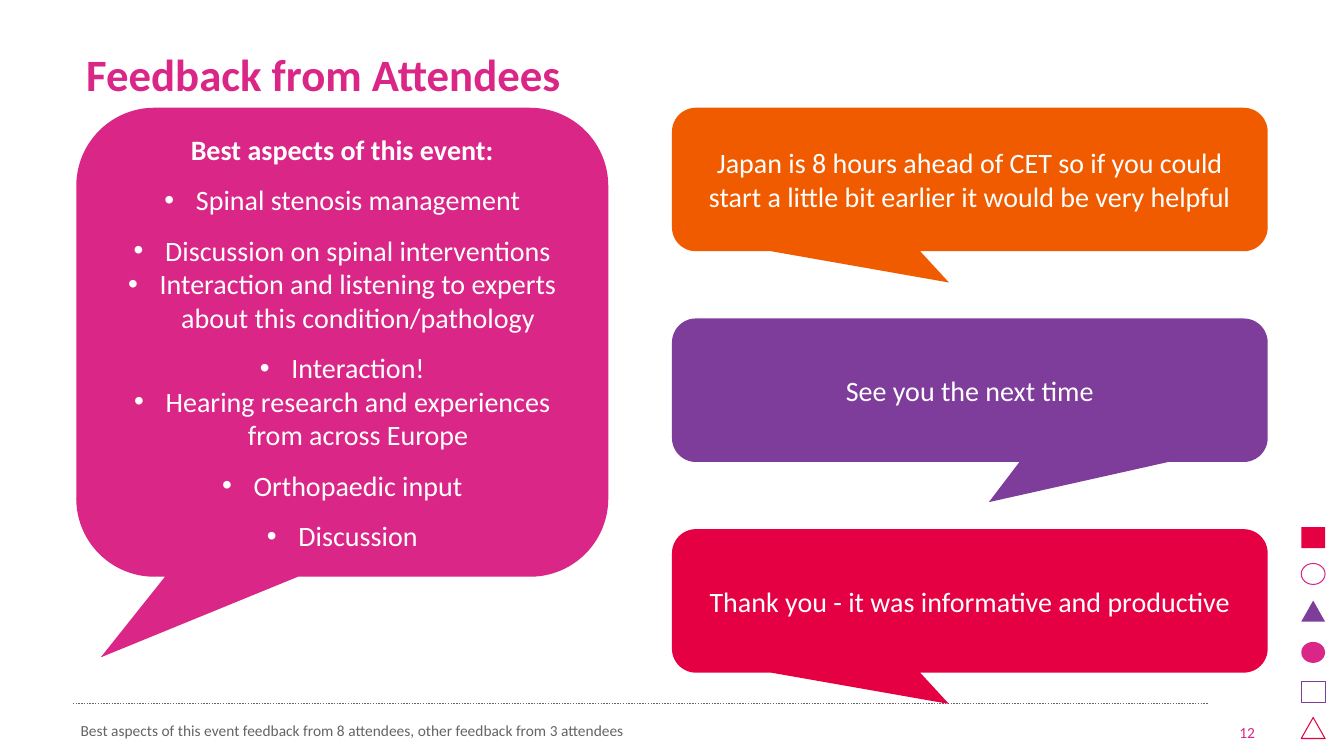
from lxml import etree
from pptx import Presentation
from pptx import util as u
from pptx.dml.color import RGBColor
from pptx.enum import dml, shapes, text
from pptx.oxml import ns

COLORS = {"pink": "DA2686", "red": "E50043", "purple": "7E3C9B",
          "orange": "F05B00", "grey": "646464", "white": "FFFFFF"}
Pt = u.Pt
KIND = shapes.MSO_SHAPE
ALIGN = text.PP_ALIGN
ANCHOR = text.MSO_ANCHOR

presentation = Presentation()
presentation.slide_width = Pt(960)
presentation.slide_height = Pt(540)
slide = presentation.slides.add_slide(presentation.slide_layouts[6])


def add_shape(kind, left, top, width, height, fill=None, line=None):
    shape = slide.shapes.add_shape(kind, Pt(left), Pt(top), Pt(width), Pt(height))
    shape.shadow.inherit = False
    if fill:
        shape.fill.solid()
        shape.fill.fore_color.rgb = RGBColor.from_string(COLORS[fill])
    else:
        shape.fill.background()
    if line:
        shape.line.color.rgb = RGBColor.from_string(COLORS[line])
        shape.line.width = Pt(0.75)
    else:
        shape.line.fill.background()
    return shape


def add_run(paragraph, words, size, color, bold=False):
    run = paragraph.add_run()
    run.text = words
    run.font.name = "Calibri"
    run.font.size = Pt(size)
    run.font.bold = bold
    run.font.color.rgb = RGBColor.from_string(COLORS[color])


margin_icons = [
    (KIND.RECTANGLE, 376.5, "red", None),
    (KIND.OVAL, 402.5, None, "pink"),
    (KIND.ISOSCELES_TRIANGLE, 429, "purple", None),
    (KIND.OVAL, 458.5, "pink", None),
    (KIND.RECTANGLE, 486.5, None, "purple"),
    (KIND.ISOSCELES_TRIANGLE, 512.5, None, "red"),
]
for kind, top, fill, line in margin_icons:
    add_shape(kind, 929.5, top, 17, 15, fill, line)

footer_line = slide.shapes.add_connector(
    shapes.MSO_CONNECTOR.STRAIGHT, Pt(52), Pt(502.5), Pt(863.5), Pt(502.5))
footer_line.line.color.rgb = RGBColor.from_string(COLORS["grey"])
footer_line.line.width = Pt(1)
footer_line.line.dash_style = dml.MSO_LINE.ROUND_DOT
etree.SubElement(footer_line._element.spPr, ns.qn("a:effectLst"))

labels = [
    ("Feedback from Attendees", 54.5, 12, 850.5, 81, 32, "pink", True, ANCHOR.MIDDLE, ALIGN.LEFT),
    ("Best aspects of this event feedback from 8 attendees, other feedback from 3 attendees",
     50.5, 499.5, 811, 32.5, 11, "grey", False, ANCHOR.BOTTOM, ALIGN.LEFT),
    ("12", 872.5, 505, 31, 28.5, 11, "pink", False, ANCHOR.BOTTOM, ALIGN.RIGHT),
]
for words, left, top, width, height, size, color, bold, anchor, align in labels:
    box = slide.shapes.add_textbox(Pt(left), Pt(top), Pt(width), Pt(height))
    box.text_frame.word_wrap = True
    box.text_frame.vertical_anchor = anchor
    paragraph = box.text_frame.paragraphs[0]
    paragraph.alignment = align
    add_run(paragraph, words, size, color, bold)

best_aspects = add_shape(KIND.ROUNDED_RECTANGULAR_CALLOUT, 54.5, 77, 380, 335, "pink")
best_aspects.adjustments[0] = -0.454
best_aspects.adjustments[1] = 0.672
frame = best_aspects.text_frame
frame.word_wrap = True
frame.vertical_anchor = ANCHOR.MIDDLE
heading = frame.paragraphs[0]
heading.alignment = ALIGN.CENTER
add_run(heading, "Best aspects of this event:", 20, "white", True)

aspects = [
    ("Spinal stenosis management", 1.5),
    ("Discussion on spinal interventions", 1.5),
    ("Interaction and listening to experts about this condition/pathology", 1),
    ("Interaction!", 1.5),
    ("Hearing research and experiences from across Europe", 1),
    ("Orthopaedic input", 1.5),
    ("Discussion", 1.5),
]
for words, spacing in aspects:
    paragraph = frame.add_paragraph()
    paragraph.alignment = ALIGN.CENTER
    paragraph.line_spacing = spacing
    properties = paragraph._p.get_or_add_pPr()
    properties.set("marL", str(Pt(22.5)))
    properties.set("indent", str(Pt(-22.5)))
    etree.SubElement(properties, ns.qn("a:buFont"), typeface="Arial")
    etree.SubElement(properties, ns.qn("a:buChar"), char="•")
    add_run(paragraph, words, 20, "white")

comments = [
    ("Japan is 8 hours ahead of CET so if you could start a little bit earlier "
     "it would be very helpful", "orange", -0.035, 0.718),
    ("See you the next time", "purple", 0.032, 0.78),
    ("Thank you - it was informative and productive", "red", -0.035, 0.718),
]
for row, (words, color, tail_x, tail_y) in enumerate(comments):
    callout = add_shape(KIND.ROUNDED_RECTANGULAR_CALLOUT, 480, 77 + row * 150.5, 425.5, 102.5, color)
    callout.adjustments[0] = tail_x
    callout.adjustments[1] = tail_y
    callout.text_frame.word_wrap = True
    callout.text_frame.vertical_anchor = ANCHOR.MIDDLE
    paragraph = callout.text_frame.paragraphs[0]
    paragraph.alignment = ALIGN.CENTER
    add_run(paragraph, words, 20, "white")

presentation.save("out.pptx")
